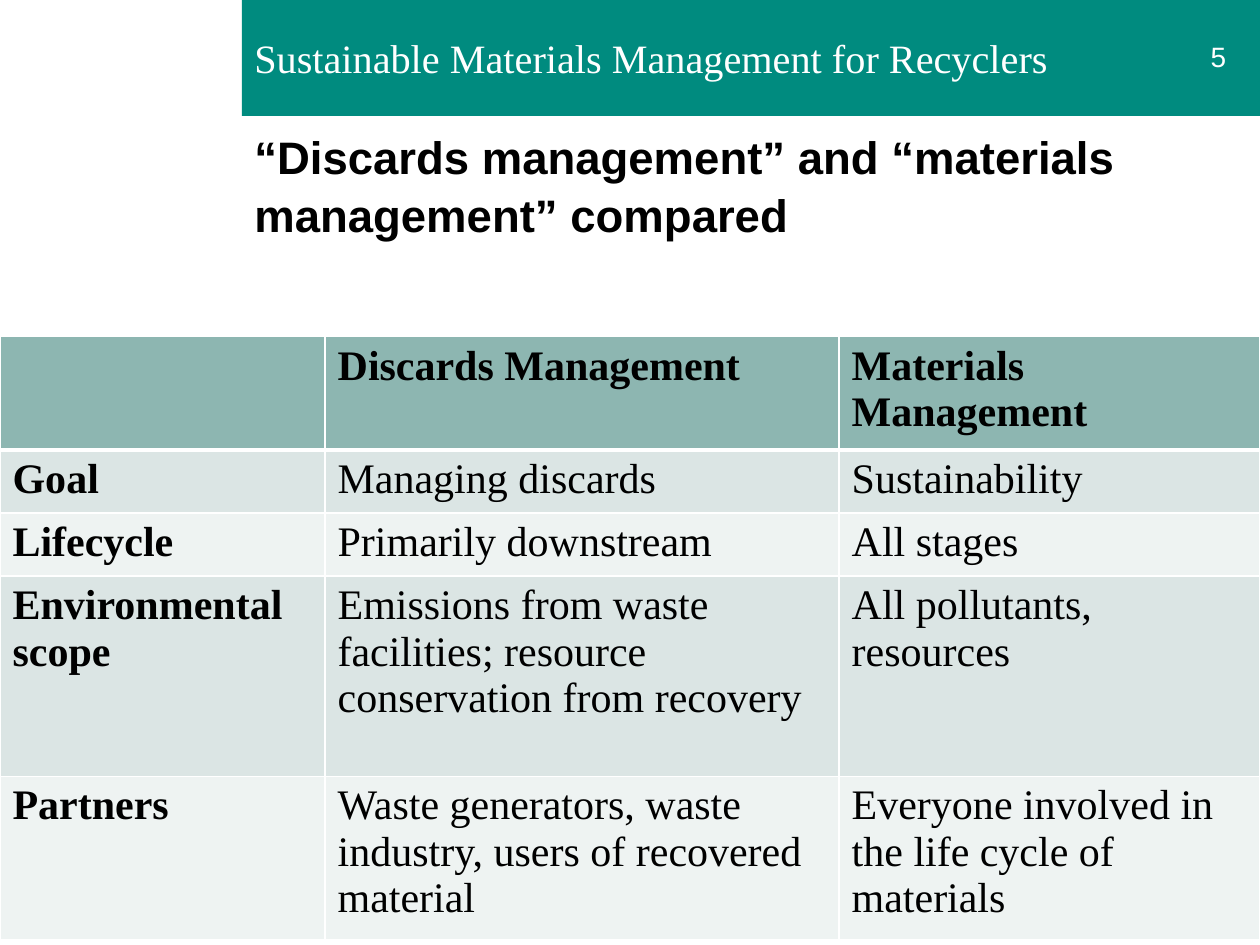
from lxml.etree import SubElement
from pptx import Presentation
from pptx.dml.color import RGBColor
from pptx.enum.shapes import MSO_SHAPE
from pptx.enum.text import MSO_ANCHOR, PP_ALIGN
from pptx.oxml.ns import qn
from pptx.util import Inches, Pt

SERIF, SANS = "Times New Roman", "Arial"
TEAL, WHITE, BLACK = "008B7F", "FFFFFF", "000000"
HEAD_FILL, BAND_FILLS = "8DB6B1", ("DBE5E4", "EEF3F2")
COL_WIDTHS = (2.58, 4.08, 3.34)
ROW_HEIGHTS = (0.84, 0.47, 0.47, 1.59, 1.22)
ROWS = (
    ("", "Discards Management", "Materials Management"),
    ("Goal", "Managing discards", "Sustainability"),
    ("Lifecycle", "Primarily downstream", "All stages"),
    ("Environmental scope",
     "Emissions from waste facilities; resource conservation from recovery",
     "All pollutants, resources"),
    ("Partners",
     "Waste generators, waste industry, users of recovered material",
     "Everyone involved in the life cycle of materials"),
)


def rgb(value):
    """Return the colour for a hex string."""
    return RGBColor.from_string(value)


def write(tf, text, font=SERIF, size=24, color=BLACK, bold=False,
          align=PP_ALIGN.LEFT, spacing=None):
    """Write one formatted paragraph into a text frame."""
    p = tf.paragraphs[0]
    p.alignment = align
    if spacing:
        p.line_spacing = spacing
    r = p.add_run()
    r.text = text
    r.font.name, r.font.size, r.font.bold = font, Pt(size), bold
    r.font.color.rgb = rgb(color)


def add_text(s, box, text, **fmt):
    """Add a wrapped, vertically centred text box."""
    tf = s.shapes.add_textbox(*map(Inches, box)).text_frame
    tf.word_wrap = True
    tf.vertical_anchor = MSO_ANCHOR.MIDDLE
    write(tf, text, **fmt)


def add_banner(s, left, top, width, height):
    """Add the coloured band with the series name and page number."""
    sp = s.shapes.add_shape(MSO_SHAPE.RECTANGLE,
                            *map(Inches, (left, top, width, height)))
    sp.shadow.inherit = False
    sp.fill.solid()
    sp.fill.fore_color.rgb = rgb(TEAL)
    sp.line.fill.background()
    add_text(s, (left, top + 0.21, 8.5, 0.49),
             "Sustainable Materials Management for Recyclers",
             size=23, color=WHITE)
    add_text(s, (left + width - 0.5, top + 0.25, 0.33, 0.4), "5",
             font=SANS, size=16, color=WHITE, align=PP_ALIGN.RIGHT)


def add_title(s, left, top, width, height):
    """Add the slide title."""
    add_text(s, (left, top, width, height),
             "“Discards management” and “materials management” compared",
             font=SANS, size=26, bold=True, spacing=1.05)


def set_borders(cell, bottom):
    """Draw white borders, with the given bottom width in points."""
    tc_pr = cell._tc.get_or_add_tcPr()
    widths = {"a:lnL": 1, "a:lnR": 1, "a:lnT": 1, "a:lnB": bottom}
    for tag, width in widths.items():
        ln = SubElement(tc_pr, qn(tag), w=str(Pt(width)))
        fill = SubElement(ln, qn("a:solidFill"))
        SubElement(fill, qn("a:srgbClr"), val=WHITE)


def add_comparison(s, left, top, width, height):
    """Add the table comparing both kinds of management."""
    table = s.shapes.add_table(len(ROWS), len(COL_WIDTHS),
                               *map(Inches, (left, top, width, height))).table
    for column, size in zip(table.columns, COL_WIDTHS):
        column.width = Inches(size)
    for i, (row, size) in enumerate(zip(table.rows, ROW_HEIGHTS)):
        row.height = Inches(size)
        is_head = i == 0
        for j, (cell, text) in enumerate(zip(row.cells, ROWS[i])):
            set_borders(cell, 3 if is_head else 1)
            cell.fill.solid()
            cell.fill.fore_color.rgb = rgb(
                HEAD_FILL if is_head else BAND_FILLS[(i - 1) % 2])
            if text:
                write(cell.text_frame, text, bold=is_head or j == 0)


def main():
    """Build and save the slide."""
    prs = Presentation()
    prs.slide_width, prs.slide_height = Inches(10), Inches(7.5)
    s = prs.slides.add_slide(prs.slide_layouts[6])
    add_banner(s, 1.92, 0, 8.08, 0.92)
    add_title(s, 1.92, 1, 8.08, 0.92)
    add_comparison(s, 0, 2.67, sum(COL_WIDTHS), sum(ROW_HEIGHTS))
    prs.save("out.pptx")


if __name__ == "__main__":
    main()
